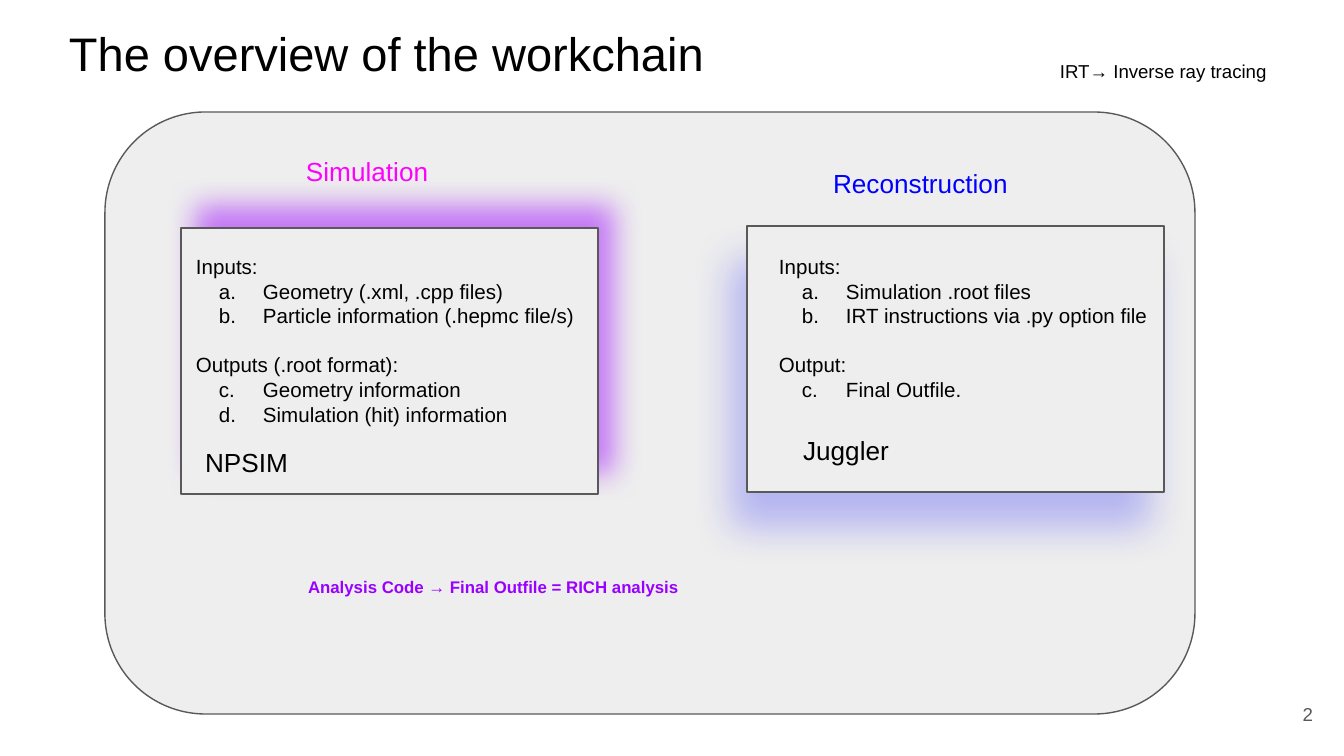
from dataclasses import dataclass

from lxml.etree import SubElement
from pptx import Presentation
from pptx.dml.color import RGBColor
from pptx.enum.shapes import MSO_SHAPE as Shape
from pptx.enum.text import MSO_ANCHOR as Anchor, PP_ALIGN as Align
from pptx.oxml.ns import qn
from pptx.util import Pt

EMU_PER_PX = 914400 / 134.4


@dataclass(frozen=True)
class Theme:
    font: str = "Arial"
    black: str = "000000"
    grey: str = "595959"
    panel: str = "EEEEEE"
    magenta: str = "FF00FF"
    blue: str = "0000FF"
    purple: str = "9900FF"
    title_size: float = 25.2
    heading_size: int = 14
    body_size: int = 11
    small_size: int = 10
    note_size: int = 9
    line_width: float = 0.75


THEME = Theme()


@dataclass(frozen=True)
class Area:
    left: int
    top: int
    width: int
    height: int

    def emu(self) -> list[int]:
        return [px(n) for n in (self.left, self.top, self.width, self.height)]


@dataclass(frozen=True)
class Label:
    text: str
    area: Area
    size: float
    color: str = THEME.black
    bold: bool = False
    align: Align = Align.LEFT
    anchor: Anchor = Anchor.TOP
    inset: tuple[int, int] = (13, 13)


@dataclass(frozen=True)
class Glow:
    color: str
    opacity: int
    blur: float
    distance: float
    angle: int


@dataclass(frozen=True)
class Section:
    heading: str
    items: tuple[str, ...]


@dataclass(frozen=True)
class Stage:
    frame: Area
    glow: Glow
    details: Area
    sections: tuple[Section, ...]
    labels: tuple[Label, ...]


def px(length: float) -> int:
    return round(length * EMU_PER_PX)


def style_spans(para, size: float, color: str, bold: bool = False) -> None:
    for span in para.runs:
        span.font.name = THEME.font
        span.font.size = Pt(size)
        span.font.bold = bold
        span.font.color.rgb = RGBColor.from_string(color)


def add_label(page, label: Label):
    box = page.shapes.add_textbox(*label.area.emu())
    frame = box.text_frame
    frame.word_wrap = True
    frame.vertical_anchor = label.anchor
    frame.margin_left = frame.margin_right = px(label.inset[0])
    frame.margin_top = frame.margin_bottom = px(label.inset[1])
    frame.text = label.text
    for para in frame.paragraphs:
        para.alignment = label.align
        style_spans(para, label.size, label.color, label.bold)
    return box


def add_panel(page, kind: Shape, area: Area):
    panel = page.shapes.add_shape(kind, *area.emu())
    panel.shadow.inherit = False
    panel.fill.solid()
    panel.fill.fore_color.rgb = RGBColor.from_string(THEME.panel)
    panel.line.color.rgb = RGBColor.from_string(THEME.grey)
    panel.line.width = Pt(THEME.line_width)
    return panel


def add_glow(panel, glow: Glow) -> None:
    effects = panel._element.spPr.find(qn("a:effectLst"))
    shadow = SubElement(
        effects, qn("a:outerShdw"), blurRad=str(Pt(glow.blur)),
        dist=str(Pt(glow.distance)), dir=str(glow.angle * 60000),
        algn="bl", rotWithShape="0")
    color = SubElement(shadow, qn("a:srgbClr"), val=glow.color)
    SubElement(color, qn("a:alpha"), val=str(glow.opacity * 1000))


def number_item(para, number: int) -> None:
    props = para._p.get_or_add_pPr()
    props.set("marL", str(px(67)))
    props.set("indent", str(-px(44)))
    color = SubElement(props, qn("a:buClr"))
    SubElement(color, qn("a:srgbClr"), val=THEME.black)
    SubElement(props, qn("a:buFont"), typeface=THEME.font)
    SubElement(props, qn("a:buAutoNum"), type="alphaLcPeriod", startAt=str(number))


def add_details(page, area: Area, sections: tuple[Section, ...]) -> None:
    lines = [line for part in sections for line in (part.heading, *part.items)]
    box = add_label(page, Label("\n".join(lines), area, THEME.body_size))
    paras = iter(box.text_frame.paragraphs)
    first_number = 1
    for part in sections:
        heading = next(paras)
        if first_number > 1:
            heading.space_before = Pt(13)
        for _ in part.items:
            # Items of one list share a start; lettering runs on across sections
            number_item(next(paras), first_number)
        first_number += len(part.items)


def add_stage(page, stage: Stage) -> None:
    add_glow(add_panel(page, Shape.RECTANGLE, stage.frame), stage.glow)
    add_details(page, stage.details, stage.sections)
    for label in stage.labels:
        add_label(page, label)


STAGES = (
    Stage(
        Area(181, 228, 417, 266), Glow(THEME.purple, 50, 15.8, 14.2, 303),
        Area(183, 241, 413, 202),
        (Section("Inputs:", ("Geometry (.xml, .cpp files)",
                             "Particle information (.hepmc file/s)")),
         Section("Outputs (.root format):", ("Geometry information",
                                             "Simulation (hit) information"))),
        (Label("Simulation", Area(293, 142, 413, 59), THEME.heading_size, THEME.magenta),
         Label("NPSIM", Area(192, 433, 413, 59), THEME.heading_size))),
    Stage(
        Area(747, 226, 417, 266), Glow(THEME.blue, 24, 21.4, 20.2, 114),
        Area(766, 241, 413, 176),
        (Section("Inputs:", ("Simulation .root files",
                             "IRT instructions via .py option file")),
         Section("Output:", ("Final Outfile.",))),
        (Label("Reconstruction", Area(820, 154, 413, 59), THEME.heading_size, THEME.blue),
         Label("Juggler", Area(790, 421, 413, 59), THEME.heading_size))),
)

LABELS = (
    Label("The overview of the workchain", Area(56, 11, 1253, 85), THEME.title_size),
    Label("Analysis Code → Final Outfile = RICH analysis",
          Area(295, 567, 413, 47), THEME.note_size, THEME.purple, bold=True),
    Label("2", Area(1246, 685, 80, 58), THEME.small_size, THEME.grey,
          align=Align.RIGHT, anchor=Anchor.MIDDLE),
    Label("IRT→ Inverse ray tracing", Area(1047, 53, 242, 36), THEME.small_size,
          inset=(13, 7)),
)


def main() -> None:
    deck = Presentation()
    deck.slide_width, deck.slide_height = px(1344), px(756)
    page = deck.slides.add_slide(deck.slide_layouts[6])

    # Rounded background behind both stages
    background = add_panel(page, Shape.ROUNDED_RECTANGLE, Area(105, 112, 1090, 602))
    background.adjustments[0] = 0.167

    # Simulation and reconstruction
    for stage in STAGES:
        add_stage(page, stage)

    # Title, notes and page number
    for label in LABELS:
        add_label(page, label)

    deck.save("out.pptx")


if __name__ == "__main__":
    main()
